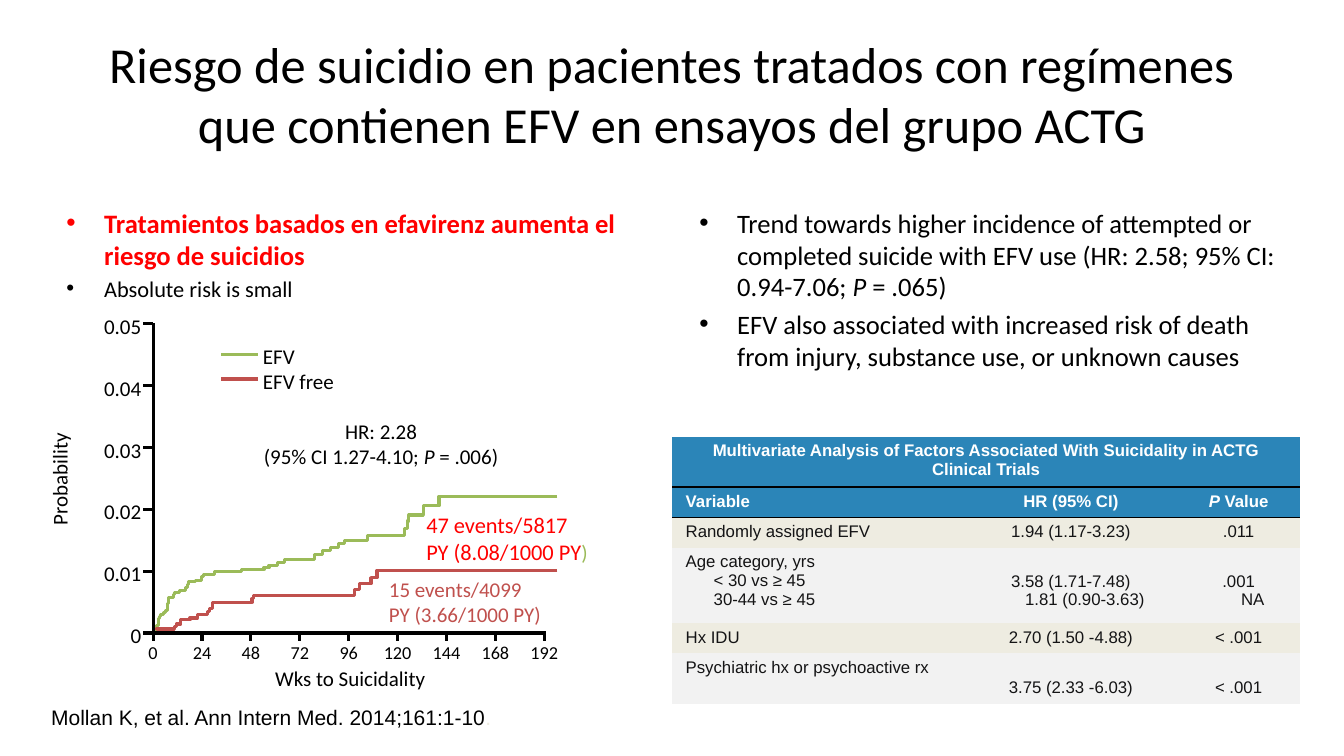
from lxml import etree
from pptx import Presentation
from pptx.dml.color import RGBColor
from pptx.enum.shapes import MSO_CONNECTOR
from pptx.enum.text import MSO_ANCHOR, MSO_AUTO_SIZE, PP_ALIGN
from pptx.oxml.ns import qn
from pptx.util import Pt

LEFT, CENTER, RIGHT = PP_ALIGN.LEFT, PP_ALIGN.CENTER, PP_ALIGN.RIGHT
TOP, MIDDLE, BOTTOM = MSO_ANCHOR.TOP, MSO_ANCHOR.MIDDLE, MSO_ANCHOR.BOTTOM
STRAIGHT = MSO_CONNECTOR.STRAIGHT
NO_AUTOFIT = MSO_AUTO_SIZE.NONE

BLACK = RGBColor(0x00, 0x00, 0x00)
WHITE = RGBColor(0xFF, 0xFF, 0xFF)
RED = RGBColor(0xFF, 0x00, 0x00)
GREEN = RGBColor(0x9B, 0xBB, 0x59)
BRICK = RGBColor(0xC0, 0x50, 0x4D)
BLUE = RGBColor(0x2B, 0x85, 0xB8)
CREAM = RGBColor(0xEE, 0xEC, 0xE1)
GREY = RGBColor(0xF2, 0xF2, 0xF2)
INK = RGBColor(0x14, 0x14, 0x15)

ITALIC = {"italic": True}
TITLE = ("Riesgo de suicidio en pacientes tratados con regímenes "
         "que contienen EFV en ensayos del grupo ACTG")
RISK_POINTS = [
    [("Tratamientos basados en efavirenz aumenta el riesgo de suicidios",
      {"size": 19, "color": RED, "bold": True})],
    "Absolute risk is small",
]
TREND_POINTS = [
    ["Trend towards higher incidence of attempted or completed suicide with "
     "EFV use (HR: 2.58; 95% CI: 0.94-7.06; ", ("P", ITALIC), " = .065)"],
    "EFV also associated with increased risk of death from injury, "
    "substance use, or unknown causes",
]
HAZARD = [["HR: 2.28\n(95% CI 1.27-4.10;", (" P ", ITALIC), "= .006)"]]
EFV_EVENTS = [["47 events/5817\nPY (8.08/1000 PY", (")", {"size": 15, "color": GREEN})]]
FREE_EVENTS = ["15 events/4099\nPY (3.66/1000 PY)"]
CITATION = [["Mollan K, et al. Ann Intern Med. 2014;161:1-10", (".", {"color": CREAM})]]

TABLE_TITLE = "Multivariate Analysis of Factors Associated With Suicidality in ACTG Clinical Trials"
TABLE_ROWS = [
    ([TABLE_TITLE], [], []),
    (["Variable"], ["HR (95% CI)"], [[("P", ITALIC), " Value"]]),
    (["Randomly assigned EFV"], ["1.94 (1.17-3.23)"], [".011"]),
    (["Age category, yrs", "< 30 vs ≥ 45", "30-44 vs ≥ 45"],
     ["3.58 (1.71-7.48)", "1.81 (0.90-3.63)"], [".001", "NA"]),
    (["Hx IDU"], ["2.70 (1.50 -4.88)"], ["< .001"]),
    (["Psychiatric hx or psychoactive rx"], ["3.75 (2.33 -6.03)"], ["< .001"]),
]
COL_WIDTHS = [208.8, 151.9, 87.8]
ROW_HEIGHTS = [36, 21.6, 21.6, 54, 21.6, 36]
LOWERED_ROWS = (3, 5)

Y_LABELS = ["0", "0.01", "0.02", "0.03", "0.04", "0.05"]
X_LABELS = [str(week) for week in range(0, 193, 24)]
AXIS_X, AXIS_Y = 109.4, 452.2
STEP_X, STEP_Y = 34.92, 44.2

EFV_CURVE = [
    (398.2, 354.5), (313.6, 361.4), (302.4, 367.9), (292, 372.2), (290.9, 377.3),
    (288.7, 382.3), (262.8, 385.9), (246.2, 388.1), (241.6, 391), (236.2, 393.1),
    (230.4, 396), (224.6, 399.6), (203, 401.8), (198, 403.9), (192.2, 405.4),
    (188.6, 406.8), (172.8, 408.2), (153, 410.4), (145.4, 411.8), (144, 414.7),
    (139.7, 415.4), (134.6, 417.6), (133.9, 419.8), (132.5, 421.6), (128.5, 423.4),
    (124.9, 424.8), (123.8, 427), (120.2, 431.3), (119.5, 436), (118.1, 437.8),
    (116.6, 438.8), (114.5, 440.6), (113.8, 442.1), (113, 447.1), (111.6, 450.7),
]
FREE_CURVE = [
    (398.2, 407.5), (269.3, 412.6), (265, 416.9), (256.7, 421.2), (253.4, 425.5),
    (181.1, 427.7), (180, 430.2), (151.9, 434.9), (149.8, 437), (148.3, 439.2),
    (141.1, 441.4), (135.7, 442.8), (129.2, 445.7), (126, 447.8), (124.6, 449.3),
    (111.6, 450),
]


def write(tf, paras, size=15, font="Calibri", color=BLACK, bold=False,
          align=LEFT, bullet=False, gap=0, indent=0):
    for i, para in enumerate(paras):
        p = tf.paragraphs[0] if i == 0 else tf.add_paragraph()
        p.alignment = align
        pPr = p._p.get_or_add_pPr()
        if bullet:
            pPr.set("marL", str(Pt(27)))
            pPr.set("indent", str(-Pt(27)))
            etree.SubElement(pPr, qn("a:buFont")).set("typeface", "Arial")
            etree.SubElement(pPr, qn("a:buChar")).set("char", "•")
        elif indent and i:
            pPr.set("marL", str(Pt(indent)))
        if i:
            p.space_before = Pt(gap)
        for run in [para] if isinstance(para, str) else para:
            text, extra = (run, {}) if isinstance(run, str) else run
            for j, line in enumerate(text.split("\n")):
                if j:
                    p.add_line_break()
                r = p.add_run()
                r.text = line
                r.font.name = font
                r.font.size = Pt(extra.get("size", size))
                r.font.bold = extra.get("bold", bold)
                r.font.italic = extra.get("italic", False)
                r.font.color.rgb = extra.get("color", color)


def add_text(s, paras, x, y, w, h, anchor=TOP, rotation=0, **fmt):
    sp = s.shapes.add_textbox(Pt(x), Pt(y), Pt(w), Pt(h))
    sp.rotation = rotation
    tf = sp.text_frame
    tf.word_wrap = True
    tf.vertical_anchor = anchor
    write(tf, paras, **fmt)


def add_line(s, x1, y1, x2, y2, color=BLACK):
    line = s.shapes.add_connector(STRAIGHT, Pt(x1), Pt(y1), Pt(x2), Pt(y2))
    line.line.color.rgb = color
    line.line.width = Pt(2.25)
    etree.SubElement(line._element.spPr, qn("a:effectLst"))


def add_curve(s, steps, color):
    x, y = steps[0]
    builder = s.shapes.build_freeform(Pt(x), Pt(y))
    corners = []
    for next_x, next_y in steps[1:]:
        corners += [(Pt(next_x), Pt(y)), (Pt(next_x), Pt(next_y))]
        y = next_y
    builder.add_line_segments(corners, close=False)
    sp = builder.convert_to_shape()
    sp.shadow.inherit = False
    sp.fill.background()
    sp.line.color.rgb = color
    sp.line.width = Pt(2.25)


def add_risk_table(s):
    frame = s.shapes.add_table(len(TABLE_ROWS), len(COL_WIDTHS), Pt(480.2), Pt(311.8),
                               Pt(sum(COL_WIDTHS)), Pt(sum(ROW_HEIGHTS)))
    table = frame.table
    table._tbl.tblPr.find(qn("a:tableStyleId")).text = "{2D5ABB26-0587-4C30-8999-92F81FD0307C}"
    for column, width in zip(table.columns, COL_WIDTHS):
        column.width = Pt(width)
    table.cell(0, 0).merge(table.cell(0, 2))
    for i, (row, height) in enumerate(zip(TABLE_ROWS, ROW_HEIGHTS)):
        table.rows[i].height = Pt(height)
        header = i < 2
        for j, paras in enumerate(row):
            cell = table.cell(i, j)
            cell.margin_left = cell.margin_right = Pt(9.6)
            cell.margin_top = Pt(17.4 if i in LOWERED_ROWS and j else 3.6)
            cell.margin_bottom = Pt(3.6)
            if header:
                ln = etree.SubElement(cell._tc.get_or_add_tcPr(), qn("a:lnT" if i else "a:lnB"))
                ln.set("w", str(Pt(1)))
                fill = etree.SubElement(ln, qn("a:solidFill"))
                etree.SubElement(fill, qn("a:srgbClr")).set("val", str(BLACK))
            cell.fill.solid()
            cell.fill.fore_color.rgb = BLUE if header else (GREY if i % 2 else CREAM)
            write(cell.text_frame, paras, size=12, font="Arial", bold=header,
                  color=WHITE if header else INK,
                  align=CENTER if j or i == 0 else LEFT, indent=20)


def add_axes(s):
    for i, label in enumerate(Y_LABELS):
        y = AXIS_Y - i * STEP_Y
        add_line(s, AXIS_X, y, AXIS_X - 7.2, y)
        add_text(s, [label], 51.8, y - 11, 56.2, 25.2, align=RIGHT)
    for i, label in enumerate(X_LABELS):
        x = AXIS_X + i * STEP_X
        add_line(s, x, AXIS_Y, x, AXIS_Y + 5.8)
        add_text(s, [label], x - 28.8, 454.3, 57.6, 23.8, size=13, align=CENTER)
    add_line(s, AXIS_X - 0.7, AXIS_Y, 390.2, AXIS_Y)
    add_line(s, AXIS_X, AXIS_Y, AXIS_X, 230.4)
    add_text(s, ["Wks to Suicidality"], 109.4, 471.6, 281.5, 25.2, align=CENTER)
    add_text(s, ["Probability"], -67.7, 329.8, 220.3, 25.2, rotation=270, align=CENTER)


def main():
    prs = Presentation()
    prs.slide_width, prs.slide_height = Pt(960), Pt(540)
    s = prs.slides.add_slide(prs.slide_layouts[5])
    title = s.shapes.title
    title.left, title.top, title.width, title.height = Pt(48), Pt(21.6), Pt(864), Pt(90)
    title.text_frame.auto_size = NO_AUTOFIT
    title.text_frame.vertical_anchor = MIDDLE
    write(title.text_frame, [TITLE], size=36, align=CENTER)

    add_text(s, RISK_POINTS, 40.3, 144, 435.6, 78.5, size=16, bullet=True, gap=3.2)
    add_text(s, TREND_POINTS, 492.5, 144, 435.6, 148.3, size=19, bullet=True, gap=3.8)
    add_text(s, HAZARD, 124.6, 295.2, 295.2, 43.9, align=CENTER)
    add_text(s, EFV_EVENTS, 297.4, 361.4, 179.3, 46.1, size=16, color=RED)
    add_text(s, FREE_EVENTS, 270.7, 408.2, 205.2, 43.9, color=BRICK)
    add_text(s, CITATION, 29.5, 499.7, 450.7, 25.2, font="Arial", anchor=BOTTOM)
    add_risk_table(s)
    add_text(s, ["EFV\nEFV free"], 180.7, 241.9, 295.2, 43.9)
    for y, color in ((253.4, GREEN), (270.7, BRICK)):
        add_line(s, 184.3, y, 157.7, y, color)
    add_curve(s, EFV_CURVE, GREEN)
    add_curve(s, FREE_CURVE, BRICK)
    add_axes(s)
    prs.save("out.pptx")


if __name__ == "__main__":
    main()
